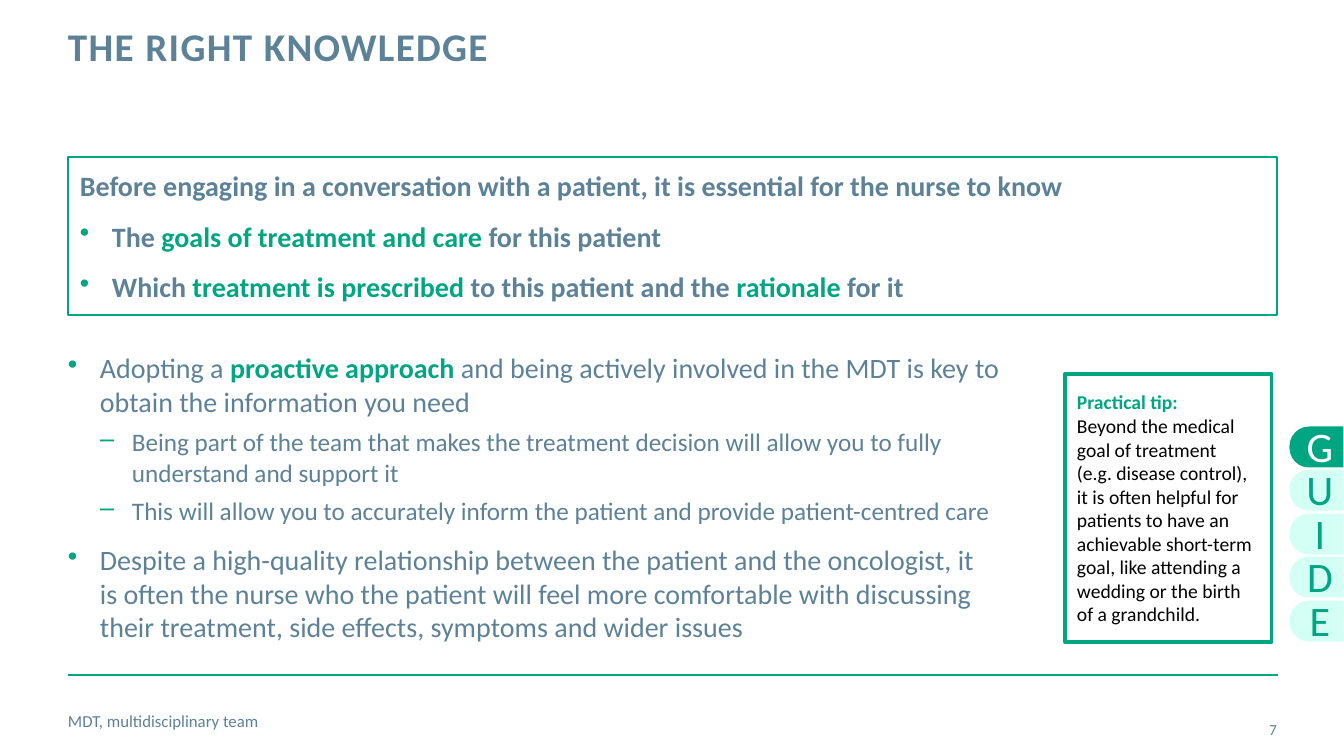
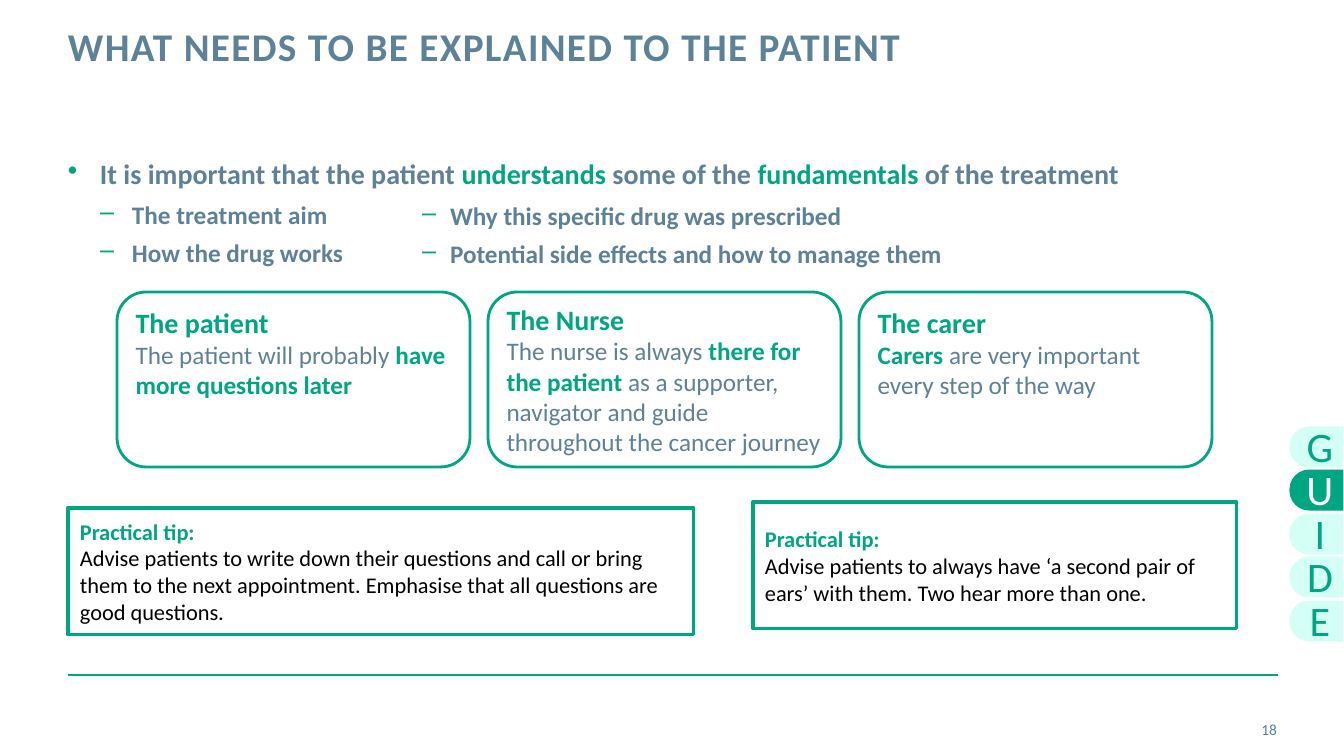
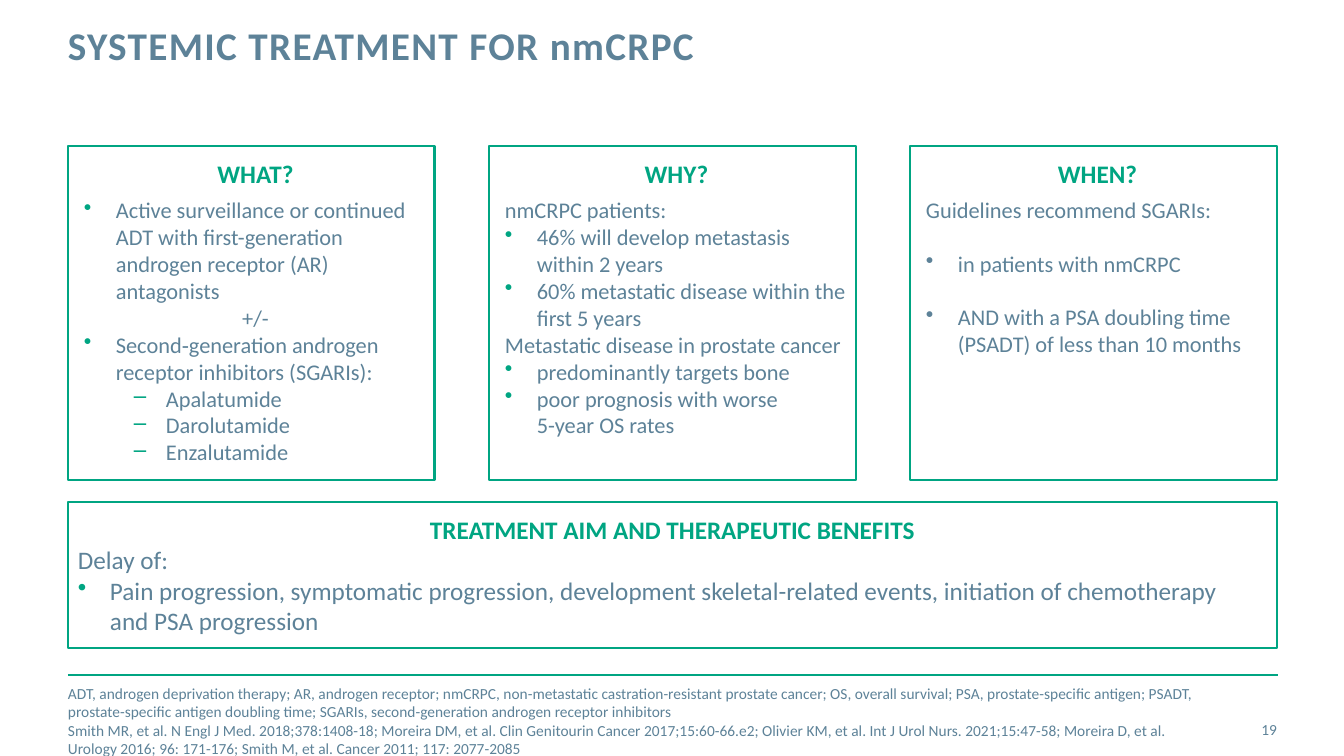
from lxml.etree import SubElement
from pptx import Presentation
from pptx.dml.color import RGBColor
from pptx.enum.shapes import MSO_CONNECTOR, MSO_SHAPE
from pptx.enum.text import MSO_ANCHOR, PP_ALIGN
from pptx.oxml.ns import qn
from pptx.util import Emu, Pt

SCALE = 914400 / 100.8
GREEN = RGBColor(0x00, 0xA5, 0x82)
SLATE = RGBColor(0x5D, 0x82, 0x98)
MINT = RGBColor(0xBA, 0xFF, 0xF0)
WHITE = RGBColor(0xFF, 0xFF, 0xFF)
BLACK = RGBColor(0x00, 0x00, 0x00)
FONT = "Calibri"

DOT = dict(mark="•", left=32, hang=32, tint=GREEN)
PLAIN_DOT = {**DOT, "tint": SLATE}
DASH = dict(mark="–", left=64, hang=32, tint=GREEN, level=1)
DEEP = {**DASH, "left": 82}
NEAR = {**DASH, "left": 28, "hang": 28}
MID = dict(alignment=PP_ALIGN.CENTER)
HEAD = dict(alignment=PP_ALIGN.CENTER, size=18, space_after=Pt(6))
GAP = dict(space_before=Pt(12))
STEP = dict(space_before=Pt(6))
SKIP = dict(space_before=Pt(19))
LARGE = dict(size=20)


def px(num):
    return Emu(round(num * SCALE))


def apply(item, form):
    for key, value in form.items():
        setattr(item, key, value)


class Deck:
    def __init__(self):
        self.prs = Presentation()
        apply(self.prs, dict(slide_width=px(1344), slide_height=px(756)))
        self.slide = None

    def page(self, title, number, top=27):
        self.slide = self.prs.slides.add_slide(self.prs.slide_layouts[6])
        self.rule(68, 675, 1278)
        self.text((68, top, 964, 89), [(title, dict(line_spacing=Pt(30)))],
                  size=28, bold=True, track=1)
        self.text((1190, 709, 87, 40), [(number, dict(alignment=PP_ALIGN.RIGHT))],
                  anchor=MSO_ANCHOR.MIDDLE, size=11)

    def rule(self, left, top, right):
        line = self.slide.shapes.add_connector(
            MSO_CONNECTOR.STRAIGHT, px(left), px(top), px(right), px(top))
        line.line.color.rgb = GREEN
        line.line.width = Pt(2)
        SubElement(line._element.spPr, qn("a:effectLst"))

    def shape(self, kind, area, fill=WHITE, edge=None):
        item = self.slide.shapes.add_shape(kind, *map(px, area))
        item.shadow.inherit = False
        item.fill.solid()
        item.fill.fore_color.rgb = fill
        if edge:
            item.line.color.rgb = GREEN
            item.line.width = Pt(edge)
        else:
            item.line.fill.background()
        return item

    def text(self, area, paras, **form):
        box = self.slide.shapes.add_textbox(*map(px, area))
        self.typeset(box.text_frame, paras, **form)

    def box(self, area, paras, kind=MSO_SHAPE.RECTANGLE, edge=2,
            inset=(10, 5, 10, 5), **form):
        item = self.shape(kind, area, edge=edge)
        self.typeset(item.text_frame, paras, inset=inset, **form)

    def tip(self, area, words, size=16):
        self.box(area, [("*Practical tip:*", {}), (words, {})], edge=2.25,
                 inset=(12, 5, 10, 5), anchor=MSO_ANCHOR.MIDDLE,
                 size=size, color=BLACK)

    def foot(self, width, paras, size):
        self.text((68, 701, width, 40), [(words, {}) for words in paras],
                  anchor=MSO_ANCHOR.MIDDLE, size=size)

    def guide(self, active):
        for row, char in enumerate("GUIDE"):
            top = 420 + 174 * row // 4
            chosen = char == active
            tab = self.shape(MSO_SHAPE.ROUND_2_SAME_RECTANGLE, (1296, top, 41, 54),
                             GREEN if chosen else MINT)
            tab.rotation = 270
            tab.adjustments[0] = 0.48
            tab.adjustments[1] = 0
            if not chosen:
                shade = tab._element.spPr.find(".//" + qn("a:srgbClr"))
                SubElement(shade, qn("a:alpha"), val="62000")
            self.text((1305, top + 1, 30, 50), [(char, MID)], wrap=False,
                      size=30, color=WHITE if chosen else GREEN)

    def typeset(self, frame, paras, inset=(0, 0, 0, 0), anchor=MSO_ANCHOR.TOP,
                wrap=True, **base):
        sides = ("margin_left", "margin_top", "margin_right", "margin_bottom")
        apply(frame, dict(zip(sides, map(px, inset))))
        apply(frame, dict(vertical_anchor=anchor, word_wrap=wrap))
        for spot, (words, extra) in enumerate(paras):
            para = frame.add_paragraph() if spot else frame.paragraphs[0]
            form = dict(size=18, color=SLATE, bold=False, track=0,
                        alignment=PP_ALIGN.LEFT)
            form.update(base)
            form.update(extra)
            if "mark" in form:
                self.bullet(para, form)
            names = ("alignment", "level", "line_spacing", "space_before", "space_after")
            apply(para, {key: form[key] for key in names if key in form})
            for turn, part in enumerate(words.split("*")):
                self.runs(para, part, form, turn % 2 == 1)

    def bullet(self, para, form):
        props = para._p.get_or_add_pPr()
        props.set("marL", str(px(form["left"])))
        props.set("indent", str(px(-form["hang"])))
        tint = SubElement(props, qn("a:buClr"))
        SubElement(tint, qn("a:srgbClr"), val=str(form["tint"]))
        SubElement(props, qn("a:buChar"), char=form["mark"])

    def runs(self, para, part, form, accent):
        for turn, words in enumerate(part.split("\n")):
            if turn:
                para.add_line_break()
            if not words:
                continue
            run = para.add_run()
            run.text = words
            apply(run.font, dict(name=FONT, size=Pt(form["size"]),
                                 bold=accent or form["bold"]))
            run.font.color.rgb = GREEN if accent else form["color"]
            if form["track"]:
                run._r.get_or_add_rPr().set("spc", str(form["track"] * 100))


def knowledge(deck):
    deck.page("THE RIGHT KNOWLEDGE", "7")
    deck.box((68, 157, 1209, 158), [
        ("Before engaging in a conversation with a patient, it is essential for the nurse to know", {}),
        ("The *goals of treatment and care *for this patient", {**DOT, **GAP}),
        ("Which *treatment is prescribed *to this patient and the *rationale* for it", {**DOT, **GAP}),
    ], inset=(12, 12, 12, 0), size=20, bold=True)
    deck.foot(895, ["MDT, multidisciplinary team"], 12)
    deck.guide("G")
    deck.text((68, 351, 932, 264), [
        ("Adopting a *proactive approach *and being actively involved in the MDT is key to obtain the information you need", {**DOT, **LARGE}),
        ("Being part of the team that makes the treatment decision will allow you to fully understand and support it", {**DASH, **STEP}),
        ("This will allow you to accurately inform the patient and provide patient-centred care", {**DASH, **STEP}),
        ("Despite a high-quality relationship between the patient and the oncologist, it\nis often the nurse who the patient will feel more comfortable with discussing their treatment, side effects, symptoms and wider issues", {**DOT, **GAP, **LARGE}),
    ])
    deck.tip((1065, 374, 207, 268), "Beyond the medical goal of treatment\n(e.g. disease control), it is often helpful for patients to have an achievable short-term goal, like attending a wedding or the birth of a grandchild.", 14)


def explain(deck):
    deck.page("WHAT NEEDS TO BE EXPLAINED TO THE PATIENT", "18")
    deck.text((68, 157, 1209, 130), [
        ("It is important that the patient *understands *some of the *fundamentals *of the treatment", {**DOT, **LARGE}),
        ("The treatment aim", {**DASH, **STEP}),
        ("How the drug works", {**DASH, **STEP}),
    ], bold=True)
    deck.text((422, 200, 800, 80), [
        ("Why this specific drug was prescribed", NEAR),
        ("Potential side effects and how to manage them", {**NEAR, **STEP}),
    ], bold=True)
    deck.guide("U")
    deck.tip((68, 508, 626, 127), "Advise patients to write down their questions and call or bring them to the next appointment. Emphasise that all questions are good questions.")
    deck.tip((753, 502, 484, 127), "Advise patients to always have ‘a second pair of ears’ with them. Two hear more than one.")
    cards = [
        ("The patient", "The patient will probably *have more questions later*", MSO_ANCHOR.TOP),
        ("The Nurse", "The nurse is always *there for the patient *as a supporter, navigator and guide throughout the cancer journey", MSO_ANCHOR.MIDDLE),
        ("The carer", "*Carers *are very important every step of the way", MSO_ANCHOR.TOP),
    ]
    for col, (name, words, anchor) in enumerate(cards):
        deck.box((117 + 371 * col, 292, 353, 175),
                 [(f"*{name}*", LARGE), (words, {})],
                 kind=MSO_SHAPE.ROUNDED_RECTANGLE, anchor=anchor)


def systemic(deck):
    deck.page("SYSTEMIC TREATMENT FOR nmCRPC", "19", 26)
    deck.foot(1150, [
        "ADT, androgen deprivation therapy; AR, androgen receptor; nmCRPC, non-metastatic castration-resistant prostate cancer; OS, overall survival; PSA, prostate-specific antigen; PSADT, prostate-specific antigen doubling time; SGARIs, second-generation androgen receptor inhibitors",
        "Smith MR, et al. N Engl J Med. 2018;378:1408-18; Moreira DM, et al. Clin Genitourin Cancer 2017;15:60-66.e2; Olivier KM, et al. Int J Urol Nurs. 2021;15:47-58; Moreira D, et al. Urology 2016; 96: 171-176; Smith M, et al. Cancer 2011; 117: 2077-2085",
    ], 11)
    panels = [
        [("*WHAT?*", HEAD),
         ("Active surveillance or continued ADT with first-generation androgen receptor (AR) antagonists", DOT),
         ("+/-", MID),
         ("Second‐generation androgen receptor inhibitors (SGARIs):", DOT),
         ("Apalatumide", DEEP),
         ("Darolutamide", DEEP),
         ("Enzalutamide", DEEP)],
        [("*WHY?*", HEAD),
         ("nmCRPC patients:", {}),
         ("46% will develop metastasis within 2 years", DOT),
         ("60% metastatic disease within the first 5 years", DOT),
         ("Metastatic disease in prostate cancer", {}),
         ("predominantly targets bone", DOT),
         ("poor prognosis with worse\n5-year OS rates", DOT)],
        [("*WHEN?*", HEAD),
         ("Guidelines recommend SGARIs:", {}),
         ("in patients with nmCRPC", {**PLAIN_DOT, **SKIP}),
         ("AND with a PSA doubling time (PSADT) of less than 10 months", {**PLAIN_DOT, **SKIP})],
    ]
    for col, paras in enumerate(panels):
        deck.box((68 + 421 * col, 146, 367, 334), paras,
                 inset=(16, 12, 8, 5), size=16)
    deck.box((68, 502, 1209, 146), [
        ("*TREATMENT AIM AND THERAPEUTIC BENEFITS*", MID),
        ("Delay of:", {}),
        ("Pain progression, symptomatic progression, development skeletal-related events, initiation of chemotherapy\nand PSA progression", DOT),
    ], anchor=MSO_ANCHOR.MIDDLE)


def main():
    deck = Deck()
    for build in (knowledge, explain, systemic):
        build(deck)
    deck.prs.save("out.pptx")


if __name__ == "__main__":
    main()
